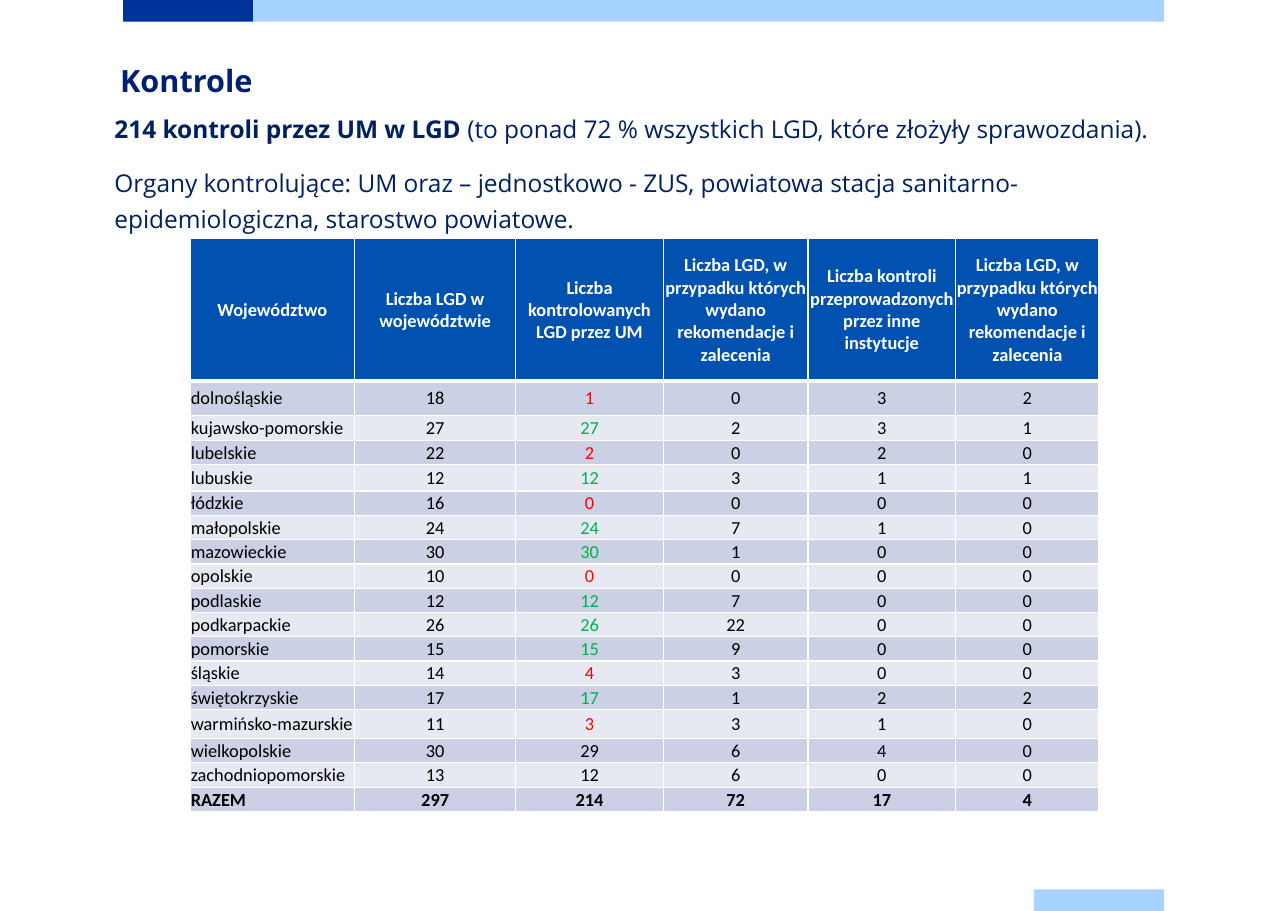
from dataclasses import dataclass
from typing import NamedTuple

from lxml.etree import SubElement
from pptx import Presentation
from pptx.dml.color import RGBColor
from pptx.enum.shapes import MSO_SHAPE
from pptx.enum.text import MSO_ANCHOR, PP_ALIGN
from pptx.oxml.ns import qn
from pptx.util import Cm, Pt

COLORS = {
    "navy bar": "003399", "light bar": "A6D3FF",
    "title": "002073", "body": "002060",
    "header": "0051B0", "odd row": "CCD0E4", "even row": "E7E9F2",
    "white": "FFFFFF", "black": "000000", "red": "FF0000", "green": "00B050",
}


@dataclass(frozen=True)
class Bar:
    left: float
    top: float
    width: float
    color: str


@dataclass(frozen=True)
class TextStyle:
    font: str
    size: int
    color: str
    bold: bool = False


class Region(NamedTuple):
    name: str
    groups: int
    controlled: int
    recommendations: int
    other_controls: int
    other_recommendations: int


BAR_HEIGHT = 0.5
BARS = [
    Bar(2.84, 0, 3, "navy bar"),
    Bar(5.84, 0, 21, "light bar"),
    Bar(23.84, 20.5, 3, "light bar"),
]

TITLE = TextStyle("Open Sans", 20, "title", True)
BODY = TextStyle("Open Sans", 16, "body")
BODY_BOLD = TextStyle("Open Sans", 16, "body", True)

HEADERS = [
    "Województwo",
    "Liczba LGD w województwie",
    "Liczba kontrolowanych LGD przez UM",
    "Liczba LGD, w przypadku których wydano rekomendacje i zalecenia",
    "Liczba kontroli przeprowadzonych przez inne instytucje",
    "Liczba LGD, w przypadku których wydano rekomendacje i zalecenia",
]
REGIONS = [
    Region("dolnośląskie", 18, 1, 0, 3, 2),
    Region("kujawsko-pomorskie", 27, 27, 2, 3, 1),
    Region("lubelskie", 22, 2, 0, 2, 0),
    Region("lubuskie", 12, 12, 3, 1, 1),
    Region("łódzkie", 16, 0, 0, 0, 0),
    Region("małopolskie", 24, 24, 7, 1, 0),
    Region("mazowieckie", 30, 30, 1, 0, 0),
    Region("opolskie", 10, 0, 0, 0, 0),
    Region("podlaskie", 12, 12, 7, 0, 0),
    Region("podkarpackie", 26, 26, 22, 0, 0),
    Region("pomorskie", 15, 15, 9, 0, 0),
    Region("śląskie", 14, 4, 3, 0, 0),
    Region("świętokrzyskie", 17, 17, 1, 2, 2),
    Region("warmińsko-mazurskie", 11, 3, 3, 1, 0),
    Region("wielkopolskie", 30, 29, 6, 4, 0),
    Region("zachodniopomorskie", 13, 12, 6, 0, 0),
    Region("RAZEM", 297, 214, 72, 17, 4),
]
CONTROLLED_COLUMN = 2
COLUMN_WIDTHS = [3.8, 3.71, 3.41, 3.33, 3.41, 3.3]
ROW_HEIGHT = 0.56
SPECIAL_ROW_HEIGHTS = {0: 3.28, 1: 0.79, 2: 0.58, 4: 0.61, 14: 0.66, 16: 0.58}


def rgb(color: str) -> RGBColor:
    return RGBColor.from_string(COLORS[color])


def add_run(paragraph, text: str, style: TextStyle) -> None:
    run = paragraph.add_run()
    run.text = text
    run.font.name = style.font
    run.font.size = Pt(style.size)
    run.font.bold = style.bold
    run.font.color.rgb = rgb(style.color)


def add_bar(slide, bar: Bar) -> None:
    shape = slide.shapes.add_shape(
        MSO_SHAPE.RECTANGLE, Cm(bar.left), Cm(bar.top), Cm(bar.width), Cm(BAR_HEIGHT))
    shape.shadow.inherit = False
    shape.fill.solid()
    shape.fill.fore_color.rgb = rgb(bar.color)
    shape.line.fill.background()


def add_text(slide, left: float, top: float, width: float, height: float,
             line_spacing: int, paragraphs: list) -> None:
    """Each paragraph is a list of (text, style) runs."""
    frame = slide.shapes.add_textbox(Cm(left), Cm(top), Cm(width), Cm(height)).text_frame
    frame.word_wrap = True
    frame.margin_left = frame.margin_right = frame.margin_top = frame.margin_bottom = 0
    for index, runs in enumerate(paragraphs):
        paragraph = frame.add_paragraph() if index else frame.paragraphs[0]
        paragraph.line_spacing = Pt(line_spacing)
        if index:
            paragraph.space_before = Pt(11)
        for text, style in runs:
            add_run(paragraph, text, style)


def set_borders(cell, top: int, bottom: int) -> None:
    properties = cell._tc.get_or_add_tcPr()
    for side, points in {"lnL": 1, "lnR": 1, "lnT": top, "lnB": bottom}.items():
        line = SubElement(properties, qn(f"a:{side}"), w=str(Pt(points)))
        fill = SubElement(line, qn("a:solidFill"))
        SubElement(fill, qn("a:srgbClr"), val=COLORS["white"])


def fill_cell(cell, text: str, style: TextStyle, fill: str, alignment: PP_ALIGN) -> None:
    cell.fill.solid()
    cell.fill.fore_color.rgb = rgb(fill)
    cell.vertical_anchor = MSO_ANCHOR.MIDDLE
    cell.margin_left = cell.margin_right = cell.margin_top = Cm(0.02)
    cell.margin_bottom = 0
    paragraph = cell.text_frame.paragraphs[0]
    paragraph.alignment = alignment
    add_run(paragraph, text, style)


def controlled_color(region: Region) -> str:
    """Green when every group was controlled, red when under half were."""
    if region.controlled == region.groups:
        return "green"
    return "red" if region.controlled < region.groups / 2 else "black"


def add_region_table(slide) -> None:
    rows = [HEADERS, *REGIONS]
    heights = [SPECIAL_ROW_HEIGHTS.get(index, ROW_HEIGHT) for index in range(len(rows))]
    table = slide.shapes.add_table(
        len(rows), len(HEADERS), Cm(4.38), Cm(5.5),
        Cm(sum(COLUMN_WIDTHS)), Cm(sum(heights))).table
    table.first_row = table.horz_banding = False
    for column, width in zip(table.columns, COLUMN_WIDTHS):
        column.width = Cm(width)
    for row_index, (values, height) in enumerate(zip(rows, heights)):
        table.rows[row_index].height = Cm(height)
        is_header = row_index == 0
        fill = "header" if is_header else "odd row" if row_index % 2 else "even row"
        bold = is_header or row_index == len(rows) - 1
        for column_index, value in enumerate(values):
            color = "white" if is_header else "black"
            if column_index == CONTROLLED_COLUMN and not is_header:
                color = controlled_color(values)
            is_name = column_index == 0 and not is_header
            cell = table.cell(row_index, column_index)
            set_borders(cell, 3 if row_index == 1 else 1, 3 if is_header else 1)
            fill_cell(cell, str(value), TextStyle("Calibri", 12, color, bold), fill,
                      PP_ALIGN.LEFT if is_name else PP_ALIGN.CENTER)


def main() -> None:
    presentation = Presentation()
    presentation.slide_width, presentation.slide_height = Cm(29.7), Cm(21)
    slide = presentation.slides.add_slide(presentation.slide_layouts[6])
    for bar in BARS:
        add_bar(slide, bar)
    add_text(slide, 2.64, 2.46, 24, 17.7, 24, [
        [("214 kontroli przez UM w LGD ", BODY_BOLD),
         ("(to ponad 72 % wszystkich LGD, które złożyły sprawozdania).", BODY)],
        [("Organy kontrolujące: UM oraz – jednostkowo - ZUS, powiatowa stacja "
          "sanitarno-epidemiologiczna, starostwo powiatowe.", BODY)],
    ])
    add_text(slide, 2.77, 1, 24, 1.6, 36, [[("Kontrole", TITLE)]])
    add_region_table(slide)
    presentation.save("out.pptx")


if __name__ == "__main__":
    main()
